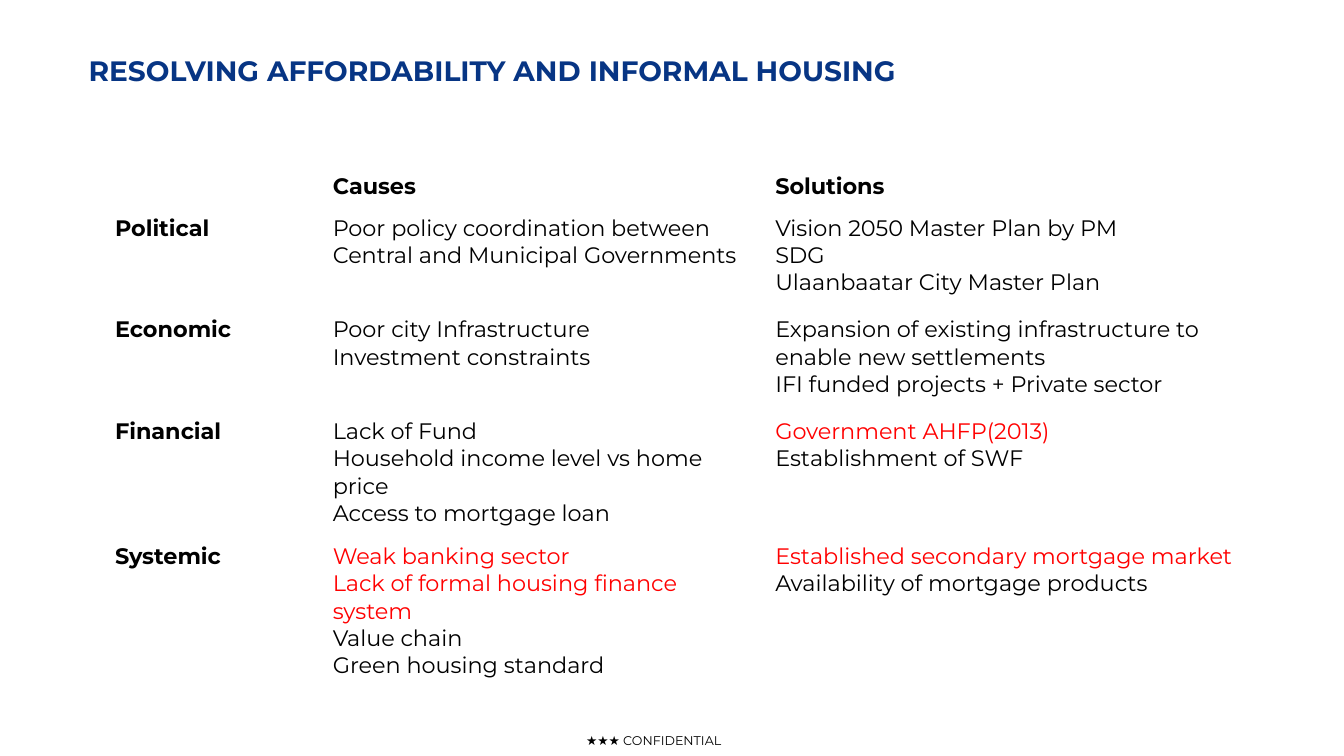
from pptx import Presentation
from pptx.dml.color import RGBColor
from pptx.enum.text import MSO_AUTO_SIZE as AutoSize, PP_ALIGN as Align
from pptx.util import Pt

NAVY = RGBColor(0x07, 0x35, 0x84)
BLACK = RGBColor(0, 0, 0)
RED = RGBColor(0xFF, 0, 0)

TITLE = "RESOLVING AFFORDABILITY AND INFORMAL HOUSING"
FOOTER = "★★★ CONFIDENTIAL"
COLUMN_WIDTHS = [155.5, 316.1, 365.8]
ROW_HEIGHTS = [29.5, 72.7, 72.7, 89.3, 110.2]
ROWS = [
    ["", "Causes", "Solutions"],
    ["Political",
     "Poor policy coordination between Central and Municipal Governments",
     "Vision 2050 Master Plan by PM\nSDG\nUlaanbaatar City Master Plan"],
    ["Economic",
     "Poor city Infrastructure\nInvestment constraints",
     "Expansion of existing infrastructure to enable new settlements\n"
     "IFI funded projects + Private sector"],
    ["Financial",
     "Lack of Fund\nHousehold income level vs home price\nAccess to mortgage loan",
     "Government AHFP(2013)\nEstablishment of SWF"],
    ["Systemic",
     "Weak banking sector\nLack of formal housing finance system\n"
     "Value chain\nGreen housing standard",
     "Established secondary mortgage market\nAvailability of mortgage products"],
]
HIGHLIGHTS = {
    "Government AHFP(2013)",
    "Weak banking sector",
    "Lack of formal housing finance system",
    "Established secondary mortgage market",
}


class SlideBuilder:
    font_name = "Montserrat"

    def __init__(self, slide):
        self.slide = slide

    def style(self, paragraph, size, color, bold):
        for font in [paragraph.font, *(run.font for run in paragraph.runs)]:
            font.name = self.font_name
            font.size = Pt(size)
            font.bold = bold
            font.color.rgb = color

    def text(self, text, left, top, width, height, size, color,
             bold=False, align=Align.LEFT, inset=None):
        shape = self.slide.shapes.add_textbox(Pt(left), Pt(top), Pt(width), Pt(height))
        frame = shape.text_frame
        frame.word_wrap = True
        frame.auto_size = AutoSize.SHAPE_TO_FIT_TEXT
        if inset is not None:
            frame.margin_left = frame.margin_right = Pt(inset)
            frame.margin_top = frame.margin_bottom = Pt(inset)
        frame.text = text
        paragraph = frame.paragraphs[0]
        paragraph.alignment = align
        self.style(paragraph, size, color, bold)

    def table(self, rows, left, top, widths, heights, size):
        shape = self.slide.shapes.add_table(
            len(rows), len(widths), Pt(left), Pt(top), Pt(sum(widths)), Pt(sum(heights)))
        table = shape.table
        table.first_row = table.horz_banding = False
        for column, width in zip(table.columns, widths):
            column.width = Pt(width)
        for row, height in zip(table.rows, heights):
            row.height = Pt(height)
        for row_index, texts in enumerate(rows):
            for column_index, text in enumerate(texts):
                cell = table.cell(row_index, column_index)
                cell.fill.background()
                cell.text_frame.text = text
                bold = row_index == 0 or column_index == 0
                for paragraph in cell.text_frame.paragraphs:
                    color = RED if paragraph.text in HIGHLIGHTS else BLACK
                    self.style(paragraph, size, color, bold)


def main():
    presentation = Presentation()
    presentation.slide_width = Pt(960)
    presentation.slide_height = Pt(540)
    builder = SlideBuilder(presentation.slides.add_slide(presentation.slide_layouts[6]))
    builder.text(FOOTER, 406.8, 523.4, 120.2, 11, 9, BLACK, align=Align.CENTER, inset=0)
    builder.text(TITLE, 56.2, 34.6, 681, 31.7, 20, NAVY, bold=True)
    builder.table(ROWS, 75, 120.2, COLUMN_WIDTHS, ROW_HEIGHTS, 16)
    presentation.save("out.pptx")


if __name__ == "__main__":
    main()
